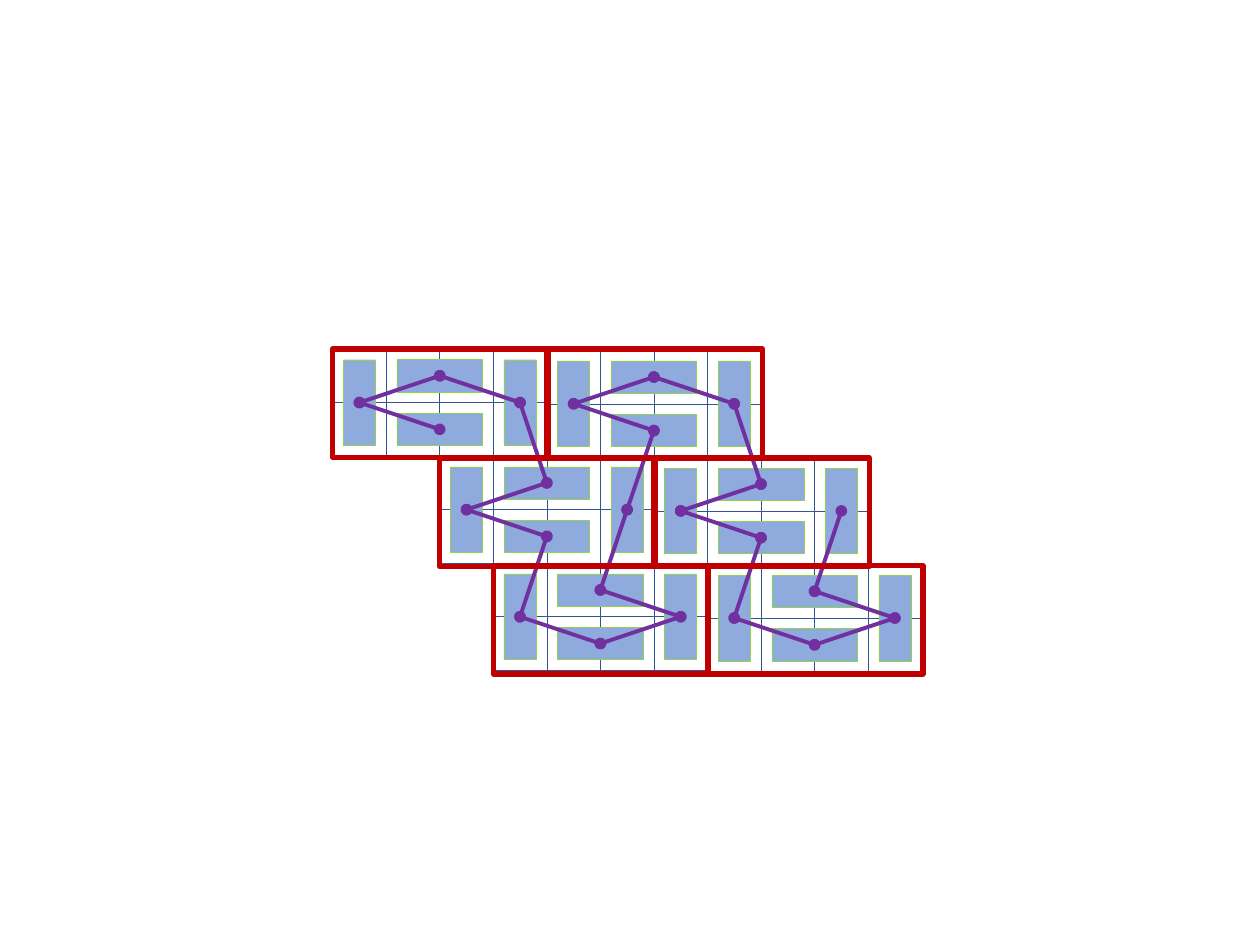
from dataclasses import dataclass
from itertools import pairwise, product

from lxml.etree import SubElement
from pptx import Presentation
from pptx.dml.color import RGBColor
from pptx.enum.shapes import MSO_CONNECTOR, MSO_SHAPE
from pptx.oxml.ns import qn
from pptx.util import Inches, Pt


@dataclass(frozen=True)
class Theme:
    cell_fill: str = "FFFFFF"
    cell_line: str = "325491"
    bar_fill: str = "8FAADC"
    bar_line: str = "92D050"
    route: str = "7030A0"
    frame: str = "C00000"
    thin: float = 0.25
    route_width: float = 2.25
    frame_width: float = 3


@dataclass(frozen=True)
class Box:
    left: float
    top: float
    width: float
    height: float


THEME = Theme()
CELL = 0.425
BLOCK_COLUMNS, BLOCK_ROWS = 4, 2
BLOCK_WIDTH, BLOCK_HEIGHT = BLOCK_COLUMNS * CELL, BLOCK_ROWS * CELL
BAR_SHORT, BAR_LONG = 0.6 * CELL, 1.6 * CELL
LEFT, TOP = 2.64, 2.77
SECOND_COLUMN_DROP = 0.01

# Shift of each row of blocks, in cells
ROW_SHIFTS = (0, 2, 3)
FRAME_TOPS = (2.77, 3.635, 4.49)

# Bar centre in cells from the block's corner, then bar width and height
BARS = {
    "left": (0.5, 1, BAR_SHORT, BAR_LONG),
    "top": (2, 0.5, BAR_LONG, BAR_SHORT),
    "bottom": (2, 1.5, BAR_LONG, BAR_SHORT),
    "right": (3.5, 1, BAR_SHORT, BAR_LONG),
}

# Stops of the route inside one column of blocks: block row and bar
COLUMN_STOPS = (
    (0, "bottom"), (0, "left"), (0, "top"), (0, "right"),
    (1, "top"), (1, "left"), (1, "bottom"),
    (2, "left"), (2, "bottom"), (2, "right"), (2, "top"),
    (1, "right"),
)


def block_box(row, column):
    return Box(
        LEFT + ROW_SHIFTS[row] * CELL + column * BLOCK_WIDTH,
        TOP + row * BLOCK_HEIGHT + column * SECOND_COLUMN_DROP,
        BLOCK_WIDTH,
        BLOCK_HEIGHT,
    )


def bar_center(box, bar):
    across, down = BARS[bar][:2]
    return box.left + across * CELL, box.top + down * CELL


def add_rectangle(shapes, box, line, line_width, fill=None):
    lengths = (Inches(v) for v in (box.left, box.top, box.width, box.height))
    shape = shapes.add_shape(MSO_SHAPE.RECTANGLE, *lengths)
    shape.shadow.inherit = False
    if fill:
        shape.fill.solid()
        shape.fill.fore_color.rgb = RGBColor.from_string(fill)
    else:
        shape.fill.background()
    shape.line.color.rgb = RGBColor.from_string(line)
    shape.line.width = Pt(line_width)


def add_block(slide, box):
    """Draw a grid of cells with the four bars over it."""
    shapes = slide.shapes.add_group_shape().shapes
    for column, row in product(range(BLOCK_COLUMNS), range(BLOCK_ROWS)):
        cell = Box(box.left + column * CELL, box.top + row * CELL, CELL, CELL)
        add_rectangle(shapes, cell, THEME.cell_line, THEME.thin, THEME.cell_fill)
    for bar, (_, _, width, height) in BARS.items():
        x, y = bar_center(box, bar)
        bar_box = Box(x - width / 2, y - height / 2, width, height)
        add_rectangle(shapes, bar_box, THEME.bar_line, THEME.thin, THEME.bar_fill)


def add_route_segment(shapes, start, end):
    ends = (Inches(value) for value in (*start, *end))
    connector = shapes.add_connector(MSO_CONNECTOR.STRAIGHT, *ends)
    connector.line.color.rgb = RGBColor.from_string(THEME.route)
    connector.line.width = Pt(THEME.route_width)
    properties = connector.element.spPr
    outline = properties.find(qn("a:ln"))
    for tag in ("a:headEnd", "a:tailEnd"):
        SubElement(outline, qn(tag), type="oval")
    SubElement(properties, qn("a:effectLst"))


def add_route(slide, boxes):
    """Join the bar centres through both columns of blocks."""
    shapes = slide.shapes.add_group_shape().shapes
    stops = [
        bar_center(boxes[row, column], bar)
        for column in range(2)
        for row, bar in COLUMN_STOPS
    ]
    for start, end in pairwise(stops):
        add_route_segment(shapes, start, end)


def add_frames(slide, boxes):
    shapes = slide.shapes.add_group_shape().shapes
    for (row, _), box in boxes.items():
        frame = Box(box.left, FRAME_TOPS[row], box.width + 0.01, box.height + 0.01)
        add_rectangle(shapes, frame, THEME.frame, THEME.frame_width)


def main():
    presentation = Presentation()
    presentation.slide_width, presentation.slide_height = Inches(10), Inches(7.5)
    slide = presentation.slides.add_slide(presentation.slide_layouts[6])
    boxes = {
        (row, column): block_box(row, column)
        for row, column in product(range(len(ROW_SHIFTS)), range(2))
    }
    for column, row in product(range(2), reversed(range(len(ROW_SHIFTS)))):
        add_block(slide, boxes[row, column])
    add_route(slide, boxes)
    add_frames(slide, boxes)
    presentation.save("out.pptx")


if __name__ == "__main__":
    main()
